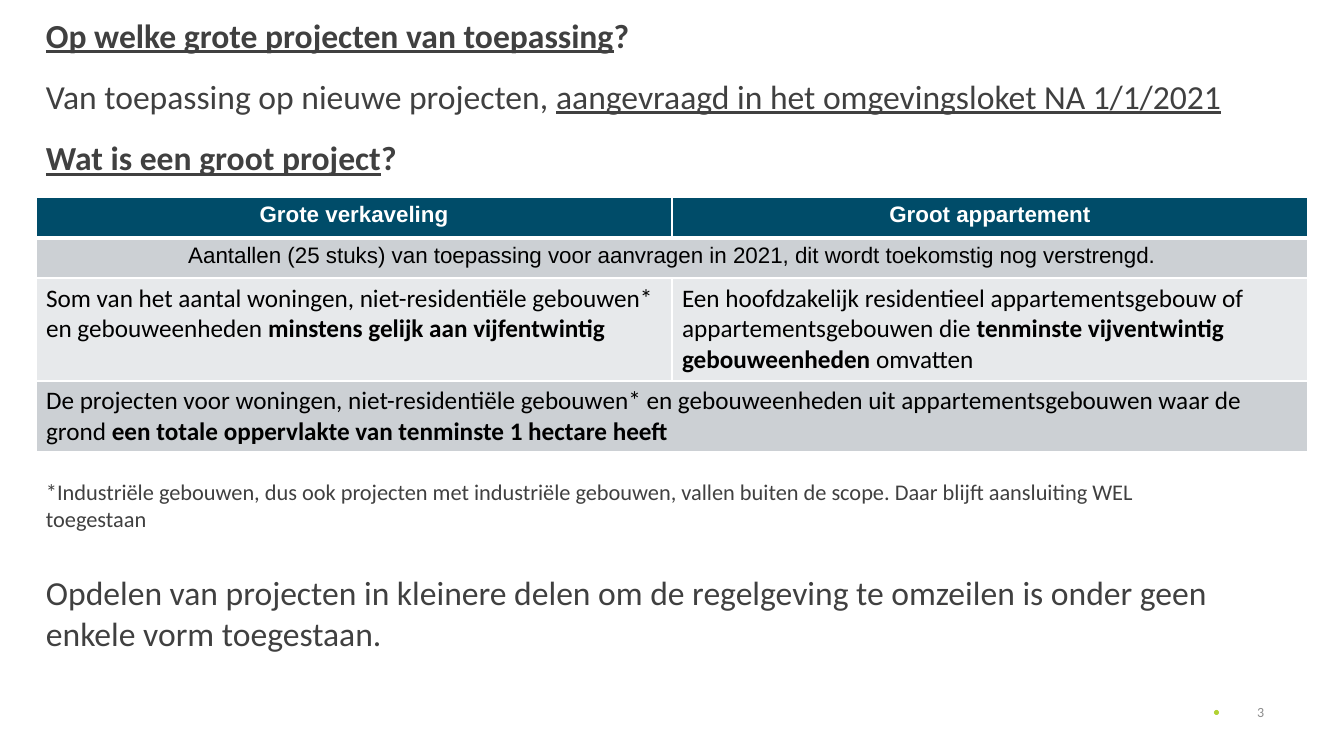
"""Build the slide on which large projects the rule applies to."""
from lxml import etree
from pptx import Presentation
from pptx.dml.color import RGBColor
from pptx.enum.shapes import MSO_SHAPE as Shape
from pptx.enum.text import MSO_ANCHOR as Anchor, PP_ALIGN as Align
from pptx.oxml.ns import qn
from pptx.util import Emu, Pt

COLORS = {
    "text": "404040", "number": "8C8C8C", "dot": "B2D234", "white": "FFFFFF",
    "black": "000000", "header": "004C69", "dark": "CCD0D4", "light": "E7E9EB",
}
PLAIN, BOLD, UNDERLINE = "", "b", "u"
INTRO = [
    (24, 0, [("Op welke grote projecten van toepassing", BOLD + UNDERLINE), ("?", BOLD)]),
    (24, 18, [("Van toepassing op nieuwe projecten, ", PLAIN),
              ("aangevraagd in het omgevingsloket NA 1/1/2021", UNDERLINE)]),
    (24, 18, [("Wat is een groot project", BOLD + UNDERLINE), ("?", BOLD)]),
]
NOTES = [
    (16, 0, [("*Industriële gebouwen, dus ook projecten met industriële gebouwen, "
              "vallen buiten de scope. Daar blijft aansluiting WEL toegestaan", PLAIN)]),
    (24, 29, [("Opdelen van projecten in kleinere delen om de regelgeving te omzeilen "
               "is onder geen enkele vorm toegestaan.", PLAIN)]),
]
PAGE_NUMBER = [(10, 0, [("3", PLAIN)])]
HEADER_STYLE = ("header", "white", "Arial", 16, Align.CENTER)
NOTICE_STYLE = ("dark", "black", "Arial", 16, Align.CENTER)
RULE_STYLE = ("light", "black", "Calibri", 18, Align.LEFT)
AREA_STYLE = ("dark", "black", "Calibri", 18, Align.LEFT)
ROWS = [
    (41, HEADER_STYLE, [[("Grote verkaveling", BOLD)], [("Groot appartement", BOLD)]]),
    (40, NOTICE_STYLE, [[("Aantallen (25 stuks) van toepassing voor aanvragen in 2021, "
                          "dit wordt toekomstig nog verstrengd.", PLAIN)]]),
    (103, RULE_STYLE, [
        [("Som van het aantal woningen, niet-residentiële gebouwen* en gebouweenheden ", PLAIN),
         ("minstens gelijk aan vijfentwintig", BOLD)],
        [("Een hoofdzakelijk residentieel appartementsgebouw of appartementsgebouwen die ", PLAIN),
         ("tenminste vijventwintig gebouweenheden", BOLD), (" omvatten", PLAIN)],
    ]),
    (71, AREA_STYLE, [[("De projecten voor woningen, niet-residentiële gebouwen* en "
                        "gebouweenheden uit appartementsgebouwen waar de grond ", PLAIN),
                       ("een totale oppervlakte van tenminste 1 hectare heeft", BOLD)]]),
]
LEFT, TABLE_TOP, COLUMN_WIDTH = 36, 197, 636


def px(*lengths):
    return [Emu(round(length * 914400 / 100.8)) for length in lengths]


def color(name):
    return RGBColor.from_string(COLORS[name])


def add_runs(paragraph, runs, size, font_name, color_name):
    for text, style in runs:
        run = paragraph.add_run()
        run.text = text
        run.font.name, run.font.size = font_name, Pt(size)
        run.font.bold, run.font.underline = BOLD in style, UNDERLINE in style
        run.font.color.rgb = color(color_name)


def add_text(slide, box, paragraphs, color_name="text", align=Align.LEFT,
             anchor=Anchor.TOP, line_spacing=1.0):
    frame = slide.shapes.add_textbox(*px(*box)).text_frame
    frame.word_wrap, frame.vertical_anchor = True, anchor
    for index, (size, space_before, runs) in enumerate(paragraphs):
        paragraph = frame.add_paragraph() if index else frame.paragraphs[0]
        paragraph.alignment, paragraph.line_spacing = align, line_spacing
        if space_before:
            paragraph.space_before = Pt(space_before)
        add_runs(paragraph, runs, size, "Calibri", color_name)


def set_borders(cell, row):
    widths = {"a:lnL": 1, "a:lnR": 1, "a:lnT": 3 if row == 1 else 1, "a:lnB": 3 if row == 0 else 1}
    properties = cell._tc.get_or_add_tcPr()
    for index, (tag, width) in enumerate(widths.items()):
        line = etree.Element(qn(tag), w=str(Pt(width)))
        fill = etree.SubElement(line, qn("a:solidFill"))
        etree.SubElement(fill, qn("a:srgbClr"), val=COLORS["white"])
        properties.insert(index, line)


def add_rules_table(slide):
    height = sum(row[0] for row in ROWS)
    box = px(LEFT, TABLE_TOP, 2 * COLUMN_WIDTH, height)
    table = slide.shapes.add_table(len(ROWS), 2, *box).table
    for column in table.columns:
        column.width = px(COLUMN_WIDTH)[0]
    for row, (row_height, style, texts) in enumerate(ROWS):
        fill_name, color_name, font_name, size, align = style
        table.rows[row].height = px(row_height)[0]
        if len(texts) == 1:
            table.cell(row, 0).merge(table.cell(row, 1))
        for column in range(2):
            cell = table.cell(row, column)
            cell.fill.solid()
            cell.fill.fore_color.rgb = color(fill_name)
            set_borders(cell, row)
        for column, runs in enumerate(texts):
            paragraph = table.cell(row, column).text_frame.paragraphs[0]
            paragraph.alignment = align
            add_runs(paragraph, runs, size, font_name, color_name)


def main():
    presentation = Presentation()
    presentation.slide_width, presentation.slide_height = px(1344, 756)
    slide = presentation.slides.add_slide(presentation.slide_layouts[6])

    dot = slide.shapes.add_shape(Shape.OVAL, *px(1214, 710, 5, 5))
    dot.shadow.inherit = False
    dot.fill.solid()
    dot.fill.fore_color.rgb = color("dot")
    dot.line.fill.background()

    add_text(slide, (LEFT, 14, 1289, 176), INTRO, line_spacing=0.9)
    add_rules_table(slide)
    add_text(slide, (LEFT, 473, 1182, 228), NOTES)
    add_text(slide, (1223, 689, 51, 45), PAGE_NUMBER, "number", Align.RIGHT, Anchor.MIDDLE)
    presentation.save("out.pptx")


if __name__ == "__main__":
    main()
